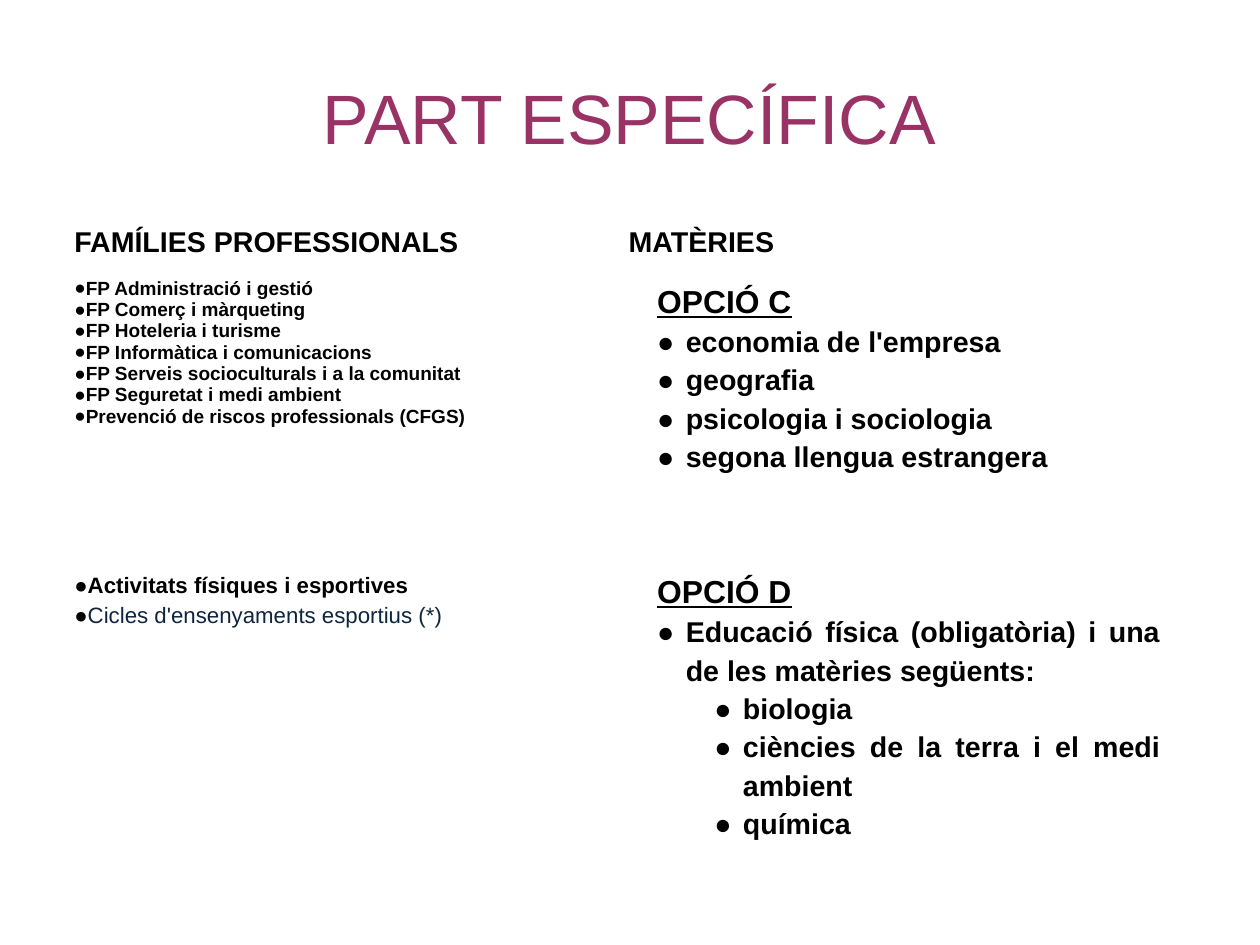
from lxml.etree import SubElement
from pptx import Presentation
from pptx.dml.color import RGBColor
from pptx.enum.text import MSO_ANCHOR, PP_ALIGN
from pptx.oxml.ns import qn
from pptx.util import Inches, Pt

FONT = "Arial"
BLACK = "000000"
CM_PER_INCH = 2.54
FAMILIES = [
    "FP Administració i gestió",
    "FP Comerç i màrqueting",
    "FP Hoteleria i turisme",
    "FP Informàtica i comunicacions",
    "FP Serveis socioculturals i a la comunitat",
    "FP Seguretat i medi ambient",
    "Prevenció de riscos professionals (CFGS)",
]
OPTION_C = [
    "economia de l'empresa",
    "geografia",
    "psicologia i sociologia",
    "segona llengua estrangera",
]
OPTION_D = "Educació física (obligatòria) i una de les matèries següents:"
OPTION_D_CHOICES = ["biologia", "ciències de la terra i el medi ambient", "química"]


def rgb(color):
    """Turn a hex string into a colour."""
    return RGBColor.from_string(color)


def write(paragraph, text, size=18, color=BLACK, bold=True, underline=False,
          align=PP_ALIGN.LEFT, spacing=1.0):
    """Fill a paragraph and format its run."""
    paragraph.text = text
    paragraph.alignment = align
    paragraph.line_spacing = spacing
    font = paragraph.runs[0].font
    font.name = FONT
    font.size = Pt(size)
    font.bold = bold
    font.underline = underline
    font.color.rgb = rgb(color)


def indent(paragraph, left, hanging):
    """Set the left margin and the hanging indent."""
    properties = paragraph._p.get_or_add_pPr()
    properties.set("marL", str(Inches(left)))
    properties.set("indent", str(-Inches(hanging)))


def add_bullet(paragraph):
    """Give a paragraph a round black bullet."""
    properties = paragraph._p.get_or_add_pPr()
    bullet_color = SubElement(properties, qn("a:buClr"))
    SubElement(bullet_color, qn("a:srgbClr"), val=BLACK)
    SubElement(properties, qn("a:buFont"), typeface=FONT)
    SubElement(properties, qn("a:buChar"), char="●")


def next_paragraph(text_frame):
    """Return the unused first paragraph or a new one."""
    first = text_frame.paragraphs[0]
    return text_frame.add_paragraph() if first.runs else first


def add_items(cell, items, left=0, hanging=0.04, **style):
    """Add bulleted items to a cell."""
    for item in items:
        paragraph = next_paragraph(cell.text_frame)
        write(paragraph, item, **style)
        indent(paragraph, left, hanging)
        add_bullet(paragraph)


def add_option(cell, name):
    """Add an underlined option heading to a cell."""
    paragraph = next_paragraph(cell.text_frame)
    write(paragraph, name, size=20, underline=True, spacing=1.2)
    indent(paragraph, 0.5, 0.25)


def add_title(slide, text):
    """Add the centred slide title."""
    box = slide.shapes.add_textbox(Inches(0.55), Inches(0.33), Inches(9.92), Inches(1.38))
    text_frame = box.text_frame
    text_frame.word_wrap = True
    text_frame.vertical_anchor = MSO_ANCHOR.MIDDLE
    text_frame.margin_left = text_frame.margin_right = 0
    text_frame.margin_top = text_frame.margin_bottom = 0
    write(text_frame.paragraphs[0], text, 44, "993366", False, align=PP_ALIGN.CENTER)


def add_plain_table(slide, row_heights, column_widths):
    """Add a white table without banding."""
    table = slide.shapes.add_table(
        len(row_heights), len(column_widths), Inches(0.55), Inches(1.93),
        Inches(sum(column_widths)), Inches(sum(row_heights))).table
    table.first_row = table.horz_banding = False
    for row, height in zip(table.rows, row_heights):
        row.height = Inches(height)
    for column, width in zip(table.columns, column_widths):
        column.width = Inches(width)
    for cell in table.iter_cells():
        cell.fill.solid()
        cell.fill.fore_color.rgb = rgb("FFFFFF")
    return table


def main():
    """Build the slide and save it."""
    presentation = Presentation()
    presentation.slide_width = Inches(28 / CM_PER_INCH)
    presentation.slide_height = Inches(21 / CM_PER_INCH)
    slide = presentation.slides.add_slide(presentation.slide_layouts[6])
    add_title(slide, "PART ESPECÍFICA")

    table = add_plain_table(slide, [0.45, 2.54, 2.7], [4.85, 4.85])
    for column, heading in enumerate(["FAMÍLIES PROFESSIONALS", "MATÈRIES"]):
        write(table.cell(0, column).text_frame.paragraphs[0], heading)

    add_items(table.cell(1, 0), FAMILIES, size=12)
    option_c = table.cell(1, 1)
    add_option(option_c, "OPCIÓ C")
    add_items(option_c, OPTION_C, 0.5, 0.25, spacing=1.2)

    justified = {"align": PP_ALIGN.JUSTIFY, "spacing": 1.2}
    sports = table.cell(2, 0)
    add_items(sports, ["Activitats físiques i esportives"], size=14, **justified)
    add_items(sports, ["Cicles d'ensenyaments esportius (*)"], size=14,
              color="0F243E", bold=False, **justified)
    option_d = table.cell(2, 1)
    add_option(option_d, "OPCIÓ D")
    add_items(option_d, [OPTION_D], 0.5, 0.25, **justified)
    add_items(option_d, OPTION_D_CHOICES, 1, 0.25, **justified)

    presentation.save("out.pptx")


if __name__ == "__main__":
    main()
